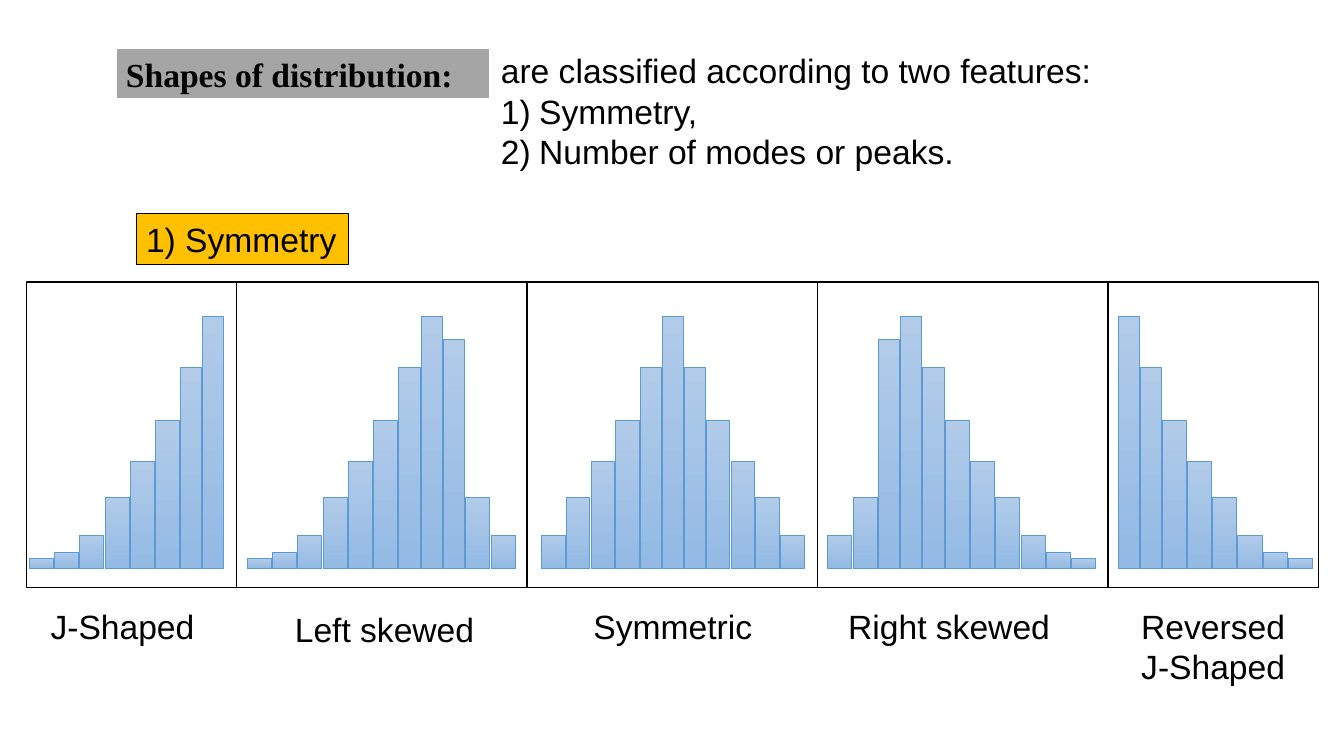
from dataclasses import dataclass
from itertools import accumulate

from lxml.etree import SubElement
from pptx import Presentation
from pptx.dml.color import RGBColor
from pptx.enum.shapes import MSO_SHAPE
from pptx.enum.text import MSO_ANCHOR, MSO_AUTO_SIZE, PP_ALIGN
from pptx.oxml.ns import qn
from pptx.util import Inches, Pt

WIDTH, HEIGHT = Inches(13.33), Inches(7.5)


@dataclass(frozen=True)
class Theme:
    ink: str = "000000"
    paper: str = "FFFFFF"
    title_fill: str = "A5A5A5"
    tag_fill: str = "FFC000"
    bar_top: str = "B1CBE9"
    bar_bottom: str = "93B9E4"
    bar_line: str = "5B9BD5"
    body_font: str = "Arial"
    title_font: str = "Times New Roman"
    size: int = 24


THEME = Theme()

RISING = [1.33, 2.2, 4.4, 9.4, 14.2, 19.6, 26.6, 33.4]
LEFT_SKEWED = RISING + [30.3, 9.4, 4.4]
SYMMETRIC = RISING[2:] + RISING[-2:1:-1]
TALL = 25
BASELINE = 75.25
BAR_GAP = 0.08

PANEL_LEFT, PANEL_TOP, PANEL_HEIGHT = 1.95, 37.33, 40.4
NARROW, WIDE = 15.65, 21.62
LABEL_WIDTH = 20.63

# fmt: off
DISTRIBUTIONS = [
    (NARROW, RISING, 2.18, 14.55, ["J-Shaped"], 9.11, 79.5),
    (WIDE, LEFT_SKEWED, 18.38, 20.03, ["Left skewed"], 28.61, 79.87),
    (WIDE, SYMMETRIC, 40.28, 19.65, ["Symmetric"], 50.06, 79.5),
    (WIDE, LEFT_SKEWED[::-1], 61.58, 20.03, ["Right skewed"], 70.61, 79.5),
    (NARROW, RISING[::-1], 83.18, 14.55, ["Reversed", "J-Shaped"], 90.26, 79.5),
]
# fmt: on


def colour(code):
    return RGBColor.from_string(code)


def place(left, top, width, height):
    return (
        round(left * WIDTH / 100),
        round(top * HEIGHT / 100),
        round(width * WIDTH / 100),
        round(height * HEIGHT / 100),
    )


def add_box(shapes, area, line, weight, fill=None):
    box = shapes.add_shape(MSO_SHAPE.RECTANGLE, *place(*area))
    box.shadow.inherit = False
    box.line.color.rgb = colour(line)
    box.line.width = Pt(weight)
    if fill:
        box.fill.solid()
        box.fill.fore_color.rgb = colour(fill)
    else:
        box.fill.background()
    return box


def write(box, lines, font=THEME.body_font, bold=False, align=PP_ALIGN.LEFT,
          anchor=MSO_ANCHOR.TOP, wrap=True, grow=False):
    frame = box.text_frame
    frame.word_wrap = wrap
    frame.vertical_anchor = anchor
    if grow:
        frame.auto_size = MSO_AUTO_SIZE.SHAPE_TO_FIT_TEXT
    for index, line in enumerate(lines):
        para = frame.add_paragraph() if index else frame.paragraphs[0]
        para.alignment = align
        span = para.add_run()
        span.text = line
        span.font.name = font
        span.font.size = Pt(THEME.size)
        span.font.bold = bold
        span.font.color.rgb = colour(THEME.ink)
    return frame


def number(para):
    properties = para._p.get_or_add_pPr()
    indent = Inches(0.38)
    properties.set("marL", str(indent))
    properties.set("indent", str(-indent))
    SubElement(properties, qn("a:buFont"), typeface="+mj-lt")
    SubElement(properties, qn("a:buAutoNum"), type="arabicParenR")


def add_histogram(page, heights, left, width):
    group = page.shapes.add_group_shape()
    weights = [0.22 if height > TALL else 0.25 for height in heights]
    steps = [width * weight / sum(weights) for weight in weights]
    edges = accumulate(steps, initial=left)
    for edge, step, height in zip(edges, steps, heights):
        area = (edge, BASELINE - height, step - BAR_GAP, height)
        bar = add_box(group.shapes, area, THEME.bar_line, 0.5)
        bar.fill.gradient()
        bar.fill.gradient_angle = 270
        for stop, shade in zip(bar.fill.gradient_stops, (THEME.bar_top, THEME.bar_bottom)):
            stop.color.rgb = colour(shade)


def add_label(page, lines, centre, top):
    area = (centre - LABEL_WIDTH / 2, top, LABEL_WIDTH, 5.6 * len(lines))
    label = page.shapes.add_textbox(*place(*area))
    write(label, lines, align=PP_ALIGN.CENTER)


def add_heading(page):
    title = add_box(page.shapes, (8.63, 6.4, 27.83, 6.67), THEME.paper, 1.5, THEME.title_fill)
    write(title, ["Shapes of distribution:"], font=THEME.title_font, bold=True,
          anchor=MSO_ANCHOR.MIDDLE, grow=True)

    features = page.shapes.add_textbox(*place(36.53, 6, 45.9, 17.47))
    frame = write(features, ["are classified according to two features:", "Symmetry,",
                             "Number of modes or peaks."], wrap=False, grow=True)
    for para in frame.paragraphs[1:]:
        number(para)

    tag = add_box(page.shapes, (10.13, 28.27, 15.83, 6.67), THEME.ink, 0.75, THEME.tag_fill)
    write(tag, ["1) Symmetry"], wrap=False, grow=True)


def main():
    deck = Presentation()
    deck.slide_width, deck.slide_height = WIDTH, HEIGHT
    page = deck.slides.add_slide(deck.slide_layouts[6])
    add_heading(page)
    panel_left = PANEL_LEFT
    for panel_width, heights, left, width, lines, centre, top in DISTRIBUTIONS:
        add_histogram(page, heights, left, width)
        add_label(page, lines, centre, top)
        add_box(page.shapes, (panel_left, PANEL_TOP, panel_width, PANEL_HEIGHT), THEME.ink, 1)
        panel_left += panel_width
    deck.save("out.pptx")


if __name__ == "__main__":
    main()
